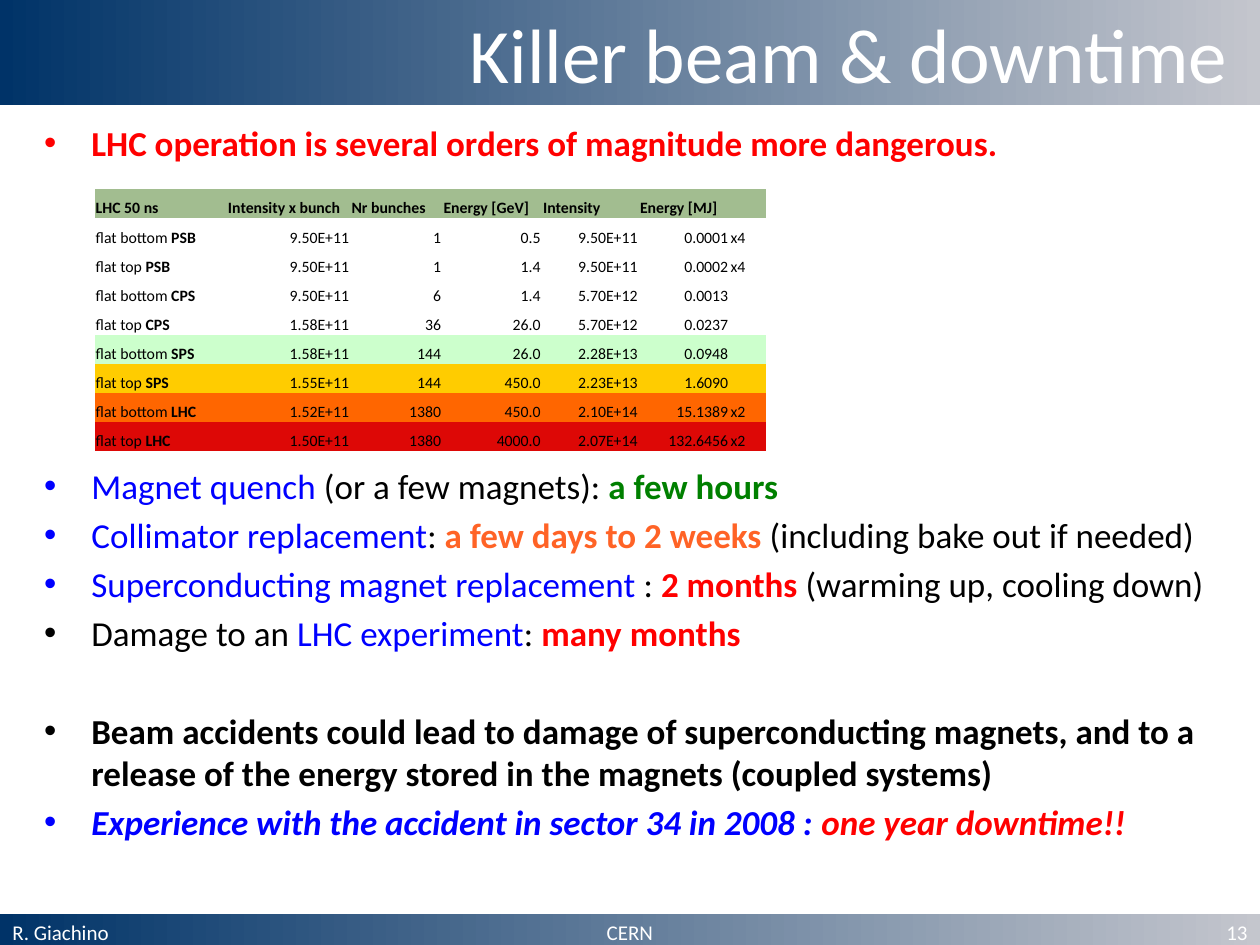
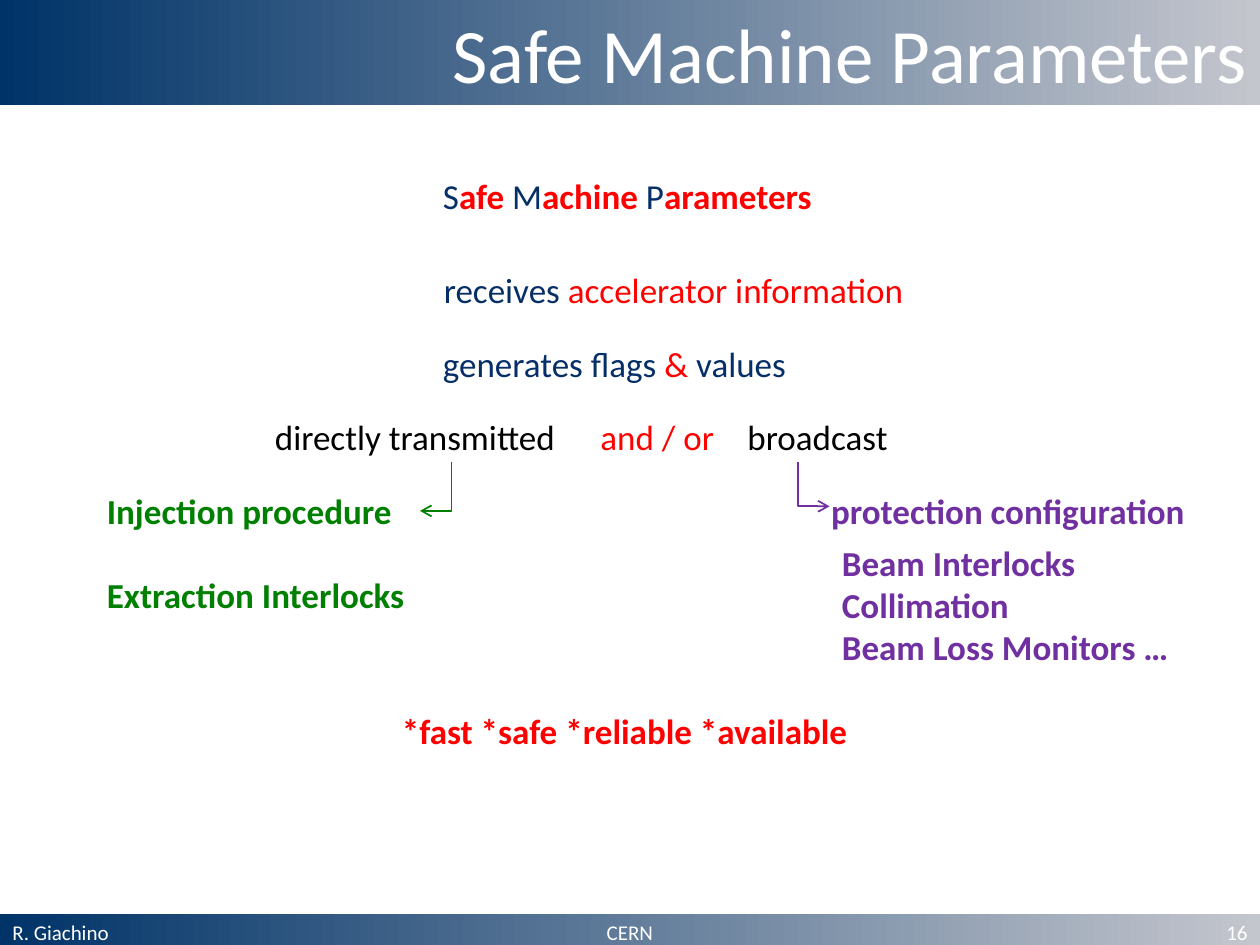
from dataclasses import dataclass
from typing import Any, NamedTuple

from lxml.etree import SubElement
from pptx import Presentation
from pptx.dml.color import RGBColor
from pptx.enum.shapes import MSO_CONNECTOR as Connector, MSO_SHAPE as Preset
from pptx.enum.text import MSO_AUTO_SIZE as AutoSize, MSO_VERTICAL_ANCHOR as Anchor, PP_ALIGN as Align
from pptx.oxml.ns import qn
from pptx.util import Pt


@dataclass(frozen=True)
class Theme:
    font: str = "Calibri"
    title_size: float = 44
    text_size: float = 20
    footer_size: float = 12
    table_size: float = 9
    band_start: str = "003368"
    band_end: str = "C4C6CD"
    white: str = "FFFFFF"
    black: str = "000000"
    navy: str = "062F67"
    red: str = "FF0000"
    blue: str = "0000FF"
    green: str = "008000"
    orange: str = "FF6326"
    purple: str = "7030A0"
    header_row: str = "A2BD90"
    sps_bottom: str = "CCFFCC"
    sps_top: str = "FFCC00"
    lhc_bottom: str = "FF6600"
    lhc_top: str = "DD0806"


THEME = Theme()
NO_GRID_STYLE = "{2D5ABB26-0587-4C30-8999-92F81FD0307C}"


class Area(NamedTuple):
    left: float
    top: float
    width: float
    height: float


class Span(NamedTuple):
    text: str
    color: str = THEME.black
    bold: bool = False
    italic: bool = False


class Bullet(NamedTuple):
    spans: list[Span]
    before: float = 4


class Label(NamedTuple):
    area: Area
    lines: list[list[Span]]
    align: Align = Align.LEFT


class Elbow(NamedTuple):
    start: tuple[float, float]
    end: tuple[float, float]
    color: str


class TableRow(NamedTuple):
    cells: list[str]
    fill: str | None = None


PAGE_WIDTH, PAGE_HEIGHT = 720, 540
BAND_HEIGHT, FOOTER_HEIGHT = 60, 18
FOOTER_TOP = PAGE_HEIGHT - FOOTER_HEIGHT
LINE_HEIGHT = 31.5


# Shared drawing functions
def apply(target: Any, values: dict[str, Any]) -> None:
    for name, value in values.items():
        setattr(target, name, value)


def place(shape: Any, area: Area) -> None:
    apply(shape, {name: Pt(value) for name, value in area._asdict().items()})


def write(para: Any, spans: list[Span], size: float, align: Align = Align.LEFT) -> None:
    para.alignment = align
    for span in spans:
        run = para.add_run()
        run.text = span.text
        apply(run.font, {"name": THEME.font, "size": Pt(size), "bold": span.bold, "italic": span.italic})
        run.font.color.rgb = RGBColor.from_string(span.color)


def add_label(page: Any, label: Label, size: float = THEME.text_size) -> Any:
    box = page.shapes.add_textbox(*map(Pt, label.area))
    frame = box.text_frame
    frame.word_wrap = True
    for index, spans in enumerate(label.lines):
        para = frame.add_paragraph() if index else frame.paragraphs[0]
        write(para, spans, size, label.align)
    return box


def add_band(page: Any, top: float, height: float) -> Any:
    band = page.shapes.add_shape(Preset.RECTANGLE, *map(Pt, (0, top, PAGE_WIDTH, height)))
    band.shadow.inherit = False
    band.line.fill.background()
    band.fill.gradient()
    band.fill.gradient_angle = 0
    for stop, color in zip(band.fill.gradient_stops, (THEME.band_start, THEME.band_end)):
        stop.color.rgb = RGBColor.from_string(color)
    return band


def add_footer(page: Any, left: float, width: float, text: str, align: Align) -> Any:
    area = Area(left, FOOTER_TOP, width, FOOTER_HEIGHT)
    return add_label(page, Label(area, [[Span(text, THEME.white)]], align), THEME.footer_size)


def furnish_master(page: Any) -> None:
    """Draw the bands and fixed footers, then move them to the slide master."""
    parts = [
        add_band(page, FOOTER_TOP, FOOTER_HEIGHT),
        add_band(page, 0, BAND_HEIGHT),
        add_footer(page, 0, 216, "R. Giachino", Align.LEFT),
        add_footer(page, 216, 288, "CERN", Align.CENTER),
    ]
    tree = page.slide_layout.slide_master.shapes.element
    for part in parts:
        tree.append(part.element)


def set_title(page: Any, text: str, area: Area, right_margin: float = 7.2) -> None:
    title = page.shapes.title
    place(title, area)
    apply(title.text_frame, {"vertical_anchor": Anchor.MIDDLE, "auto_size": AutoSize.NONE,
                             "margin_right": Pt(right_margin)})
    write(title.text_frame.paragraphs[0], [Span(text, THEME.white)], THEME.title_size, Align.RIGHT)


def set_bullets(page: Any, bullets: list[Bullet], area: Area) -> None:
    body = page.placeholders[1]
    place(body, area)
    frame = body.text_frame
    frame.auto_size = AutoSize.NONE
    for index, bullet in enumerate(bullets):
        para = frame.add_paragraph() if index else frame.paragraphs[0]
        para.space_before = Pt(bullet.before)
        write(para, bullet.spans, THEME.text_size)


def add_elbow(page: Any, elbow: Elbow) -> None:
    """Draw an arrow that goes down first and then sideways."""
    (x0, y0), (x1, y1) = elbow.start, elbow.end
    across, down = abs(x1 - x0), y1 - y0
    left, top = (x0 + x1 - down) / 2, (y0 + y1 - across) / 2
    ends = [left, left + down]
    to_right = x1 > x0
    if to_right:
        ends.reverse()
    line = page.shapes.add_connector(Connector.ELBOW, *map(Pt, (ends[0], top, ends[1], top + across)))
    line.line.width = Pt(1)
    line.line.color.rgb = RGBColor.from_string(elbow.color)
    props = line.element.spPr
    props.find(qn("a:xfrm")).set("rot", str((270 if to_right else 90) * 60000))
    props.find(qn("a:prstGeom")).set("prst", "bentConnector2")
    SubElement(props.find(qn("a:ln")), qn("a:tailEnd"), type="arrow")
    SubElement(props, qn("a:effectLst"))


def fill_cell(cell: Any, spans: list[Span], align: Align, fill: str | None) -> None:
    apply(cell, {"margin_left": Pt(0.72), "margin_right": Pt(0.72), "margin_top": Pt(0.72),
                 "margin_bottom": Pt(0), "vertical_anchor": Anchor.BOTTOM})
    if fill:
        cell.fill.solid()
        cell.fill.fore_color.rgb = RGBColor.from_string(fill)
    else:
        cell.fill.background()
    para = cell.text_frame.paragraphs[0]
    write(para, spans, THEME.table_size, align)
    # The end mark keeps empty cells from growing the row
    SubElement(para._p, qn("a:endParaRPr"), sz=str(THEME.table_size * 100))


def add_beam_table(page: Any, rows: list[TableRow], widths: list[float], area: Area) -> None:
    frame = page.shapes.add_table(len(rows), len(widths), *map(Pt, area))
    table = frame.table
    apply(table, {"first_row": False, "horz_banding": False})
    frame.element.find(".//" + qn("a:tableStyleId")).text = NO_GRID_STYLE
    for column, width in zip(table.columns, widths):
        column.width = Pt(width)
    for row_index, row in enumerate(rows):
        table.rows[row_index].height = Pt(area.height / len(rows))
        for column_index, text in enumerate(row.cells):
            header = row_index == 0
            spans = [Span(text, bold=header)] if text else []
            if column_index == 0 and not header:
                state, machine = text.rsplit(" ", 1)
                spans = [Span(state + " "), Span(machine, bold=True)]
            number = not header and 0 < column_index < len(widths) - 1
            fill_cell(table.cell(row_index, column_index), spans,
                      Align.RIGHT if number else Align.LEFT, row.fill)


# Slide content
BEAM_WIDTHS = [75.6, 70.6, 52.6, 56.9, 55.4, 51.8, 20.9]
BEAM_ROWS = [
    TableRow(["LHC 50 ns", "Intensity x bunch", "Nr bunches", "Energy [GeV]", "Intensity", "Energy [MJ]", ""],
             THEME.header_row),
    TableRow(["flat bottom PSB", "9.50E+11", "1", "0.5", "9.50E+11", "0.0001", "x4"]),
    TableRow(["flat top PSB", "9.50E+11", "1", "1.4", "9.50E+11", "0.0002", "x4"]),
    TableRow(["flat bottom CPS", "9.50E+11", "6", "1.4", "5.70E+12", "0.0013", ""]),
    TableRow(["flat top CPS", "1.58E+11", "36", "26.0", "5.70E+12", "0.0237", ""]),
    TableRow(["flat bottom SPS", "1.58E+11", "144", "26.0", "2.28E+13", "0.0948", ""], THEME.sps_bottom),
    TableRow(["flat top SPS", "1.55E+11", "144", "450.0", "2.23E+13", "1.6090", ""], THEME.sps_top),
    TableRow(["flat bottom LHC", "1.52E+11", "1380", "450.0", "2.10E+14", "15.1389", "x2"], THEME.lhc_bottom),
    TableRow(["flat top LHC", "1.50E+11", "1380", "4000.0", "2.07E+14", "132.6456", "x2"], THEME.lhc_top),
]

DOWNTIME_BULLETS = [
    Bullet([Span("LHC operation is several orders of magnitude more dangerous.", THEME.red, True)], 0),
    Bullet([Span("Magnet quench ", THEME.blue), Span("(or a few magnets): "),
            Span("a few hours", THEME.green, True)], 172),
    Bullet([Span("Collimator replacement", THEME.blue), Span(": "),
            Span("a few days to 2 weeks ", THEME.orange, True), Span("(including bake out if needed)")]),
    Bullet([Span("Superconducting magnet replacement ", THEME.blue), Span(": "),
            Span("2 months ", THEME.red, True), Span("(warming up, cooling down)")]),
    Bullet([Span("Damage to an "), Span("LHC experiment", THEME.blue), Span(": "),
            Span("many months", THEME.red, True)]),
    Bullet([Span("Beam accidents could lead to damage of superconducting magnets, and to a release "
                 "of the energy stored in the magnets (coupled systems)", bold=True)], 32),
    Bullet([Span("Experience with the accident in sector 34 in 2008 :", THEME.blue, True, True),
            Span(" one year downtime!!", THEME.red, True, True)]),
]


def one_line(left: float, top: float, width: float, *spans: Span, align: Align = Align.LEFT) -> Label:
    return Label(Area(left, top, width, LINE_HEIGHT), [list(spans)], align)


PARAMETER_LABELS = [
    one_line(246, 96, 228, Span("S", THEME.navy), Span("afe ", THEME.red, True), Span("M", THEME.navy),
             Span("achine ", THEME.red, True), Span("P", THEME.navy), Span("arameters", THEME.red, True)),
    one_line(246.5, 150, 290, Span("receives ", THEME.navy), Span("accelerator information", THEME.red)),
    one_line(246, 192, 228, Span("generates flags ", THEME.navy), Span("& ", THEME.red),
             Span("values", THEME.navy)),
    one_line(150, 234, 180, Span("directly transmitted")),
    one_line(336, 234, 84, Span("and / or", THEME.red)),
    one_line(420, 234, 98, Span("broadcast")),
    one_line(54, 276, 186, Span("Injection procedure", THEME.green, True)),
    one_line(54, 324, 192, Span("Extraction Interlocks", THEME.green, True)),
    one_line(456, 276, 228, Span("protection configuration", THEME.purple, True), align=Align.RIGHT),
    Label(Area(474, 306, 228, 80), [[Span(text, THEME.purple, True)] for text in
                                    ("Beam Interlocks", "Collimation", "Beam Loss Monitors …")]),
    one_line(216, 402, 282, Span("*fast *safe *reliable *available", THEME.red, True), align=Align.CENTER),
]

FLOW_ARROWS = [
    Elbow((258, 264), (240, 292), THEME.green),
    Elbow((456, 264), (474, 289.3), THEME.purple),
]


def main() -> None:
    deck = Presentation()
    apply(deck, {"slide_width": Pt(PAGE_WIDTH), "slide_height": Pt(PAGE_HEIGHT)})

    # Killer beam slide
    beam_page = deck.slides.add_slide(deck.slide_layouts[1])
    furnish_master(beam_page)
    set_title(beam_page, "Killer beam & downtime", Area(60, 0, 660, BAND_HEIGHT), 18)
    set_bullets(beam_page, DOWNTIME_BULLETS, Area(18, 66, 684, 420))
    add_beam_table(beam_page, BEAM_ROWS, BEAM_WIDTHS, Area(54, 108, sum(BEAM_WIDTHS), 149.8))

    # Safe Machine Parameters slide
    flow_page = deck.slides.add_slide(deck.slide_layouts[5])
    set_title(flow_page, "Safe Machine Parameters", Area(72, 0, 648, BAND_HEIGHT))
    for label in PARAMETER_LABELS:
        add_label(flow_page, label)
    for arrow in FLOW_ARROWS:
        add_elbow(flow_page, arrow)

    for page, number in ((beam_page, "13"), (flow_page, "16")):
        add_footer(page, 624, 96, number, Align.RIGHT)
    deck.save("out.pptx")


if __name__ == "__main__":
    main()
